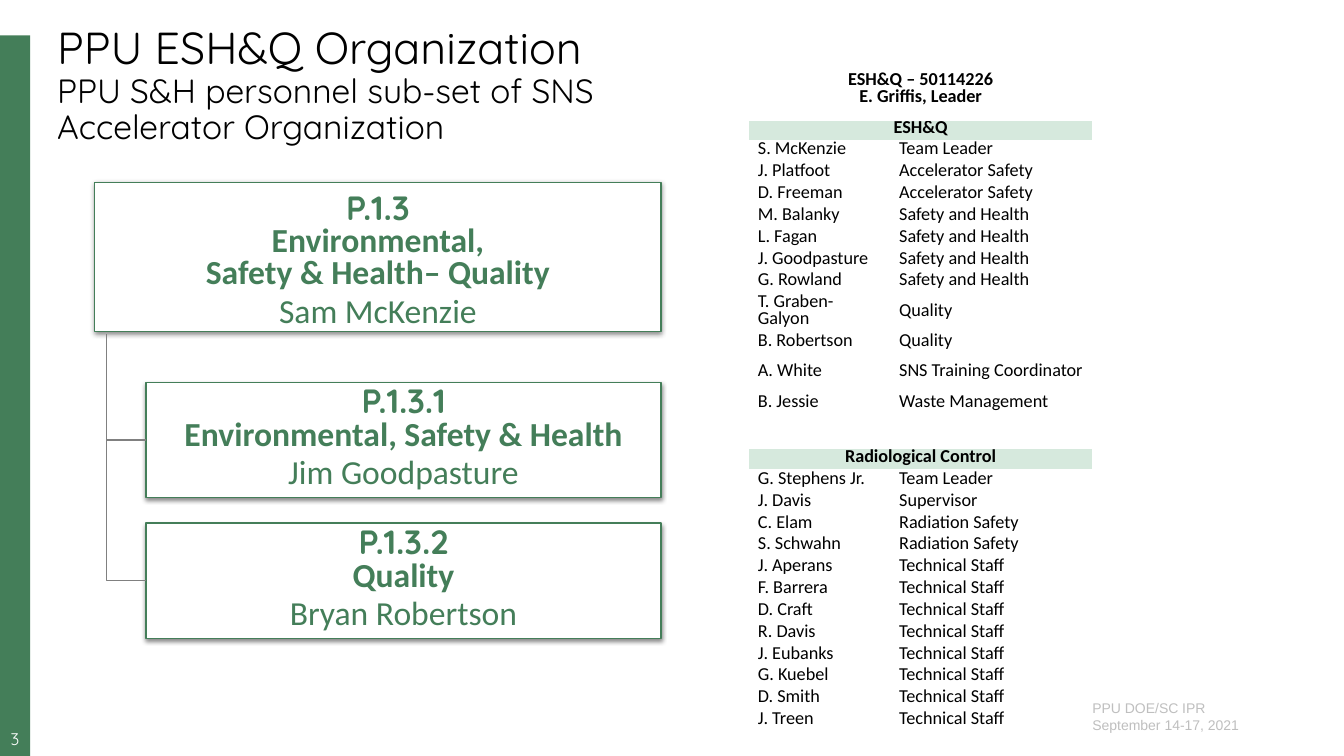
import lxml.etree
import pptx
import pptx.dml.color
import pptx.enum.shapes
import pptx.enum.text
import pptx.oxml.ns
import pptx.util

Cm, Pt = pptx.util.Cm, pptx.util.Pt
qn = pptx.oxml.ns.qn
ALIGN = pptx.enum.text.PP_ALIGN
ANCHOR = pptx.enum.text.MSO_ANCHOR
GREEN, MINT, WHITE, BLACK = "447E59", "D6E9DD", "FFFFFF", "000000"
GREY, SILVER = "808080", "BFBFBF"

SAFETY_TEAM = [
    ("S. McKenzie", "Team Leader"), ("J. Platfoot", "Accelerator Safety"),
    ("D. Freeman", "Accelerator Safety"), ("M. Balanky", "Safety and Health"),
    ("L. Fagan", "Safety and Health"), ("J. Goodpasture", "Safety and Health"),
    ("G. Rowland", "Safety and Health"), ("T. Graben-Galyon", "Quality"),
    ("B. Robertson", "Quality"), ("A. White", "SNS Training Coordinator"),
    ("B. Jessie", "Waste Management"),
]
RADIOLOGICAL_TEAM = [
    ("G. Stephens Jr.", "Team Leader"), ("J. Davis", "Supervisor"),
    ("C. Elam", "Radiation Safety"), ("S. Schwahn", "Radiation Safety"),
] + [(name, "Technical Staff") for name in (
    "J. Aperans", "F. Barrera", "D. Craft", "R. Davis",
    "J. Eubanks", "G. Kuebel", "D. Smith", "J. Treen")]
ROSTER = [("ESH&Q – 50114226\nE. Griffis, Leader",), ("ESH&Q",), *SAFETY_TEAM,
          ("", ""), ("Radiological Control",), *RADIOLOGICAL_TEAM]
ROW_HEIGHTS = {"T. Graben-Galyon": 0.97, "A. White": 0.99, "": 0.66, ROSTER[0][0]: 1.42}


def rgb(code):
    """Turn a hex string into a colour."""
    return pptx.dml.color.RGBColor.from_string(code)


def apply(target, formats):
    """Set each attribute of a target from a dict."""
    for attribute, value in formats.items():
        setattr(target, attribute, value)


def write(paragraph, lines, color, formats):
    """Fill a paragraph with (text, font, size, bold) lines parted by line breaks."""
    apply(paragraph, formats)
    for index, (text, font, size, bold) in enumerate(lines):
        if index:
            paragraph.add_line_break()
        run = paragraph.add_run()
        run.text = text
        apply(run.font, {"name": font, "size": Pt(size), "bold": bold})
        run.font.color.rgb = rgb(color)


def set_frame(frame, margin_x, margin_y, anchor):
    """Set wrapping, insets and anchor of a text frame."""
    apply(frame, {"word_wrap": True, "vertical_anchor": anchor,
                  "margin_left": Cm(margin_x), "margin_right": Cm(margin_x),
                  "margin_top": Cm(margin_y), "margin_bottom": Cm(margin_y)})
    return frame


def add_rectangle(slide, box, fill):
    """Add a plain filled rectangle without outline or shadow."""
    rectangle = slide.shapes.add_shape(pptx.enum.shapes.MSO_SHAPE.RECTANGLE, *map(Cm, box))
    rectangle.shadow.inherit = False
    rectangle.fill.solid()
    rectangle.fill.fore_color.rgb = rgb(fill)
    rectangle.line.fill.background()
    return rectangle


def add_side_bar(slide, box):
    """Add the green bar with the page number at its foot."""
    left, top, width, height = box
    add_rectangle(slide, box, GREEN)
    number = slide.shapes.add_textbox(Cm(left), Cm(top + height - 0.63), Cm(width), Cm(0.43))
    frame = set_frame(number.text_frame, 0, 0, ANCHOR.TOP)
    write(frame.paragraphs[0], [("3", "Quicksand", 12, False)], WHITE,
          {"alignment": ALIGN.CENTER, "line_spacing": 0.9})


def add_title(slide, box):
    """Add the title with its two smaller lines."""
    frame = set_frame(slide.shapes.add_textbox(*map(Cm, box)).text_frame, 0.25, 0.13, ANCHOR.TOP)
    write(frame.paragraphs[0], [
        ("PPU ESH&Q Organization", "Quicksand", 32, False),
        ("PPU S&H personnel sub-set of SNS", "Quicksand", 24, False),
        ("Accelerator Organization", "Quicksand", 24, False),
    ], BLACK, {"line_spacing": 0.9})


def add_footer(slide, box):
    """Add the review name and date."""
    frame = set_frame(slide.shapes.add_textbox(*map(Cm, box)).text_frame, 0.25, 0.13, ANCHOR.TOP)
    for index, text in enumerate(("PPU DOE/SC IPR", "September 14-17, 2021")):
        paragraph = frame.add_paragraph() if index else frame.paragraphs[0]
        write(paragraph, [(text, "Arial", 10, False)], SILVER, {})


def add_card(slide, box, code, duties, manager, anchor):
    """Add one organization card with a soft shadow."""
    card = add_rectangle(slide, box, WHITE)
    card.line.color.rgb = rgb(GREEN)
    card.line.width = Pt(0.75)
    effects = card._element.spPr.find(qn("a:effectLst"))
    shadow = lxml.etree.SubElement(effects, qn("a:outerShdw"), blurRad=str(Pt(3.5)),
                                   dist=str(Pt(1.1)), dir="5400000", rotWithShape="0")
    shade = lxml.etree.SubElement(shadow, qn("a:srgbClr"), val=BLACK)
    lxml.etree.SubElement(shade, qn("a:alpha"), val="45000")
    frame = set_frame(card.text_frame, 0.03, 0.03, anchor)
    heading = [(code, "Quicksand", 24, True)] + [(duty, "Calibri", 24, True) for duty in duties]
    write(frame.paragraphs[0], heading, GREEN,
          {"alignment": ALIGN.CENTER, "line_spacing": 0.8, "space_after": Pt(2)})
    write(frame.add_paragraph(), [(manager, "Calibri", 24, False)], GREEN,
          {"alignment": ALIGN.CENTER, "line_spacing": 0.9})
    return card


def add_branch(slide, card, kind, end):
    """Join the left side of a card to a point on the trunk."""
    branch = slide.shapes.add_connector(kind, card.left, card.top + card.height // 2, *end)
    branch.begin_connect(card, 1)
    branch.line.color.rgb = rgb(GREY)
    branch.line.width = Pt(1)
    lxml.etree.SubElement(branch._element.spPr, qn("a:effectLst"))
    return branch


def add_organization(slide, box):
    """Add the parent card, its two child cards and their branches."""
    left, top, width, height = box
    indent, child_height = 1.29, 2.91
    pitch = height - child_height - 5.03
    add_card(slide, (left, top, width, 3.76), "P.1.3",
             ("Environmental,", "Safety & Health– Quality"), "Sam McKenzie", ANCHOR.BOTTOM)
    health, quality = [
        add_card(slide, (left + indent, top + 5.03 + index * pitch, width - indent, child_height),
                 code, (duty,), manager, ANCHOR.MIDDLE)
        for index, (code, duty, manager) in enumerate([
            ("P.1.3.1", "Environmental, Safety & Health", "Jim Goodpasture"),
            ("P.1.3.2", "Quality", "Bryan Robertson")])]
    trunk, kinds = Cm(left + 0.3), pptx.enum.shapes.MSO_CONNECTOR
    elbow = add_branch(slide, quality, kinds.ELBOW, (trunk, Cm(top + 3.81)))
    elbow._element.spPr.find(qn("a:prstGeom")).set("prst", "bentConnector2")
    add_branch(slide, health, kinds.STRAIGHT, (trunk, health.top + health.height // 2))


def set_borders(cell, bottom):
    """Give a cell white borders, with the bottom one of the given width."""
    properties = cell._tc.get_or_add_tcPr()
    for index, (side, width) in enumerate(
            {"a:lnL": 1, "a:lnR": 1, "a:lnT": 1, "a:lnB": bottom}.items()):
        border = lxml.etree.Element(qn(side), w=str(Pt(width)))
        fill = lxml.etree.SubElement(border, qn("a:solidFill"))
        lxml.etree.SubElement(fill, qn("a:srgbClr"), val=WHITE)
        properties.insert(index, border)


def add_roster(slide, box):
    """Add the staff table; one-item rows span both columns."""
    table = slide.shapes.add_table(len(ROSTER), 2, *map(Cm, box)).table
    apply(table, {"first_row": False, "horz_banding": False})
    for column, width in zip(table.columns, (3.56, box[2] - 3.56)):
        column.width = Cm(width)
    for index, entry in enumerate(ROSTER):
        table.rows[index].height = Cm(ROW_HEIGHTS.get(entry[0], 0.55))
        heading = len(entry) == 1
        if heading:
            table.cell(index, 0).merge(table.cell(index, 1))
        for position in range(2):
            cell = table.cell(index, position)
            cell.fill.solid()
            cell.fill.fore_color.rgb = rgb(MINT if heading and index else WHITE)
            set_borders(cell, 1 if index else 3)
            apply(cell, {"margin_left": Cm(0.23), "margin_right": Cm(0.23), "margin_top": Cm(0.04),
                         "margin_bottom": Cm(0.04), "vertical_anchor": ANCHOR.MIDDLE})
            cell.text_frame.paragraphs[0].line_spacing = Pt(12)
        for position, text in enumerate(entry):
            frame = table.cell(index, position).text_frame
            for order, line in enumerate(text.splitlines()):
                paragraph = frame.add_paragraph() if order else frame.paragraphs[0]
                write(paragraph, [(line, "Calibri", 13, heading)], BLACK, {
                    "alignment": ALIGN.CENTER if heading else ALIGN.LEFT, "line_spacing": Pt(12)})


def main():
    """Build the slide and save it."""
    deck = pptx.Presentation()
    apply(deck, {"slide_width": Cm(33.87), "slide_height": Cm(19.05)})
    slide = deck.slides.add_slide(deck.slide_layouts[6])
    add_side_bar(slide, (0, 0.89, 0.76, 18.16))
    add_footer(slide, (27.28, 17.5, 5.66, 1.12))
    add_title(slide, (1.19, 0.53, 32.23, 4.57))
    add_organization(slide, (2.39, 4.6, 14.27, 11.49))
    add_roster(slide, (18.87, 1.57, 8.66, 16.66))
    deck.save("out.pptx")


if __name__ == "__main__":
    main()
